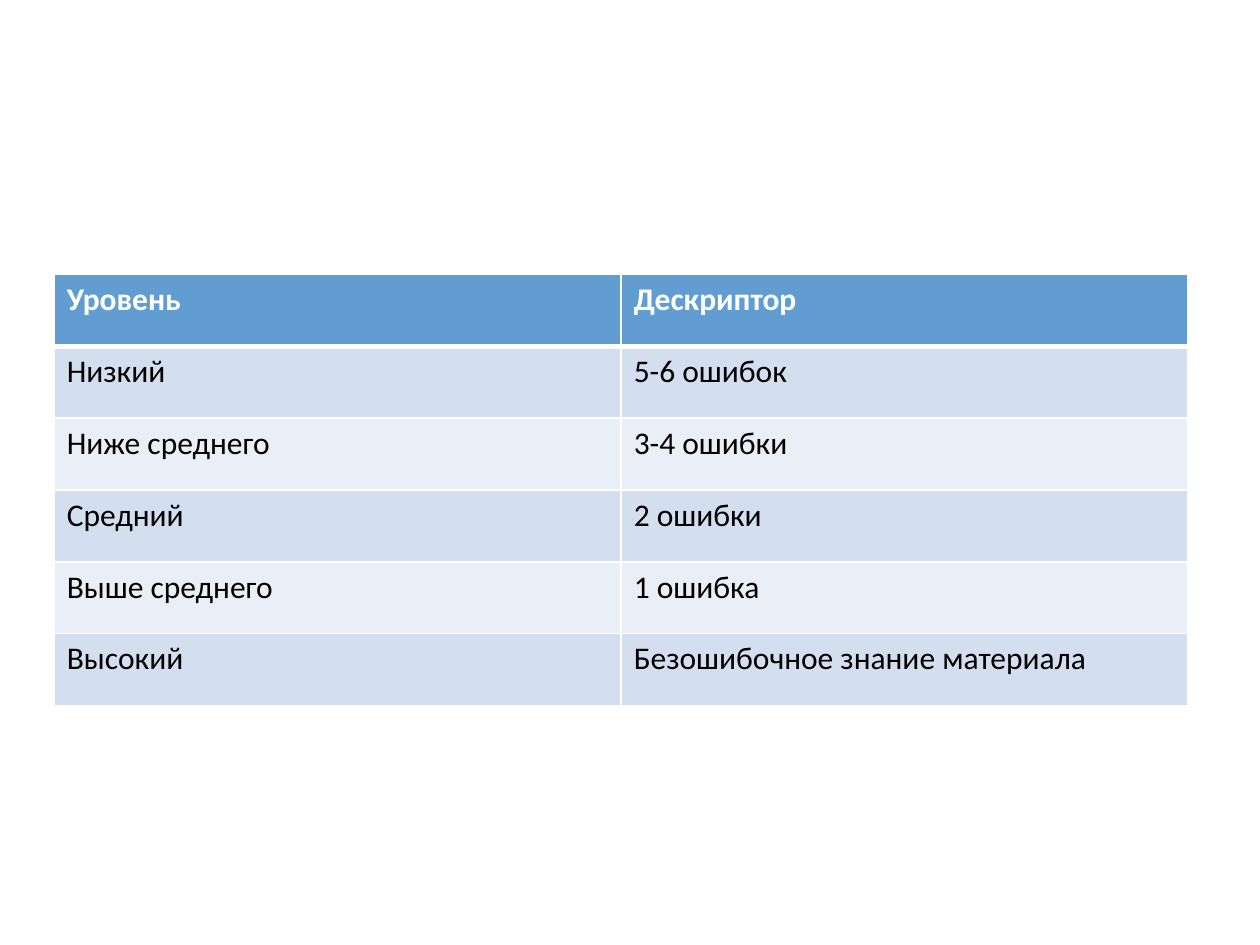
from lxml import etree
from pptx import Presentation
from pptx.dml.color import RGBColor
from pptx.oxml import ns
from pptx.util import Inches, Pt

FONT = "Calibri"
WHITE, BLACK = "FFFFFF", "000000"
HEADER_FILL = "629DD1"
BAND_FILLS = ("D3DFEE", "EAEFF7")

ROWS = [
    ("Уровень", "Дескриптор"),
    ("Низкий", "5-6 ошибок"),
    ("Ниже среднего", "3-4 ошибки"),
    ("Средний", "2 ошибки"),
    ("Выше среднего", "1 ошибка"),
    ("Высокий", "Безошибочное знание материала"),
]


def color(value):
    return RGBColor.from_string(value)


def set_borders(cell, widths):
    """Draw white cell borders; widths maps each side to points."""
    properties = cell._tc.get_or_add_tcPr()
    for side, width in widths.items():
        line = etree.SubElement(properties, ns.qn(f"a:ln{side}"), w=str(Pt(width)))
        fill = etree.SubElement(line, ns.qn("a:solidFill"))
        etree.SubElement(fill, ns.qn("a:srgbClr"), val=WHITE)


def format_cell(cell, content, row):
    is_header = row == 0
    # Borders come before the fill in the cell properties
    set_borders(cell, {"L": 1, "R": 1, "T": 3 if row == 1 else 1, "B": 3 if is_header else 1})
    cell.fill.solid()
    cell.fill.fore_color.rgb = color(HEADER_FILL if is_header else BAND_FILLS[(row - 1) % 2])

    cell.text = content
    font = cell.text_frame.paragraphs[0].font
    font.name = FONT
    font.size = Pt(18)
    font.bold = is_header
    font.color.rgb = color(WHITE if is_header else BLACK)


def add_level_table(slide):
    row_height = Inches(0.57)
    table = slide.shapes.add_table(
        len(ROWS), len(ROWS[0]), Inches(0.43), Inches(2.18),
        Inches(9), row_height * len(ROWS),
    ).table
    for row, contents in enumerate(ROWS):
        table.rows[row].height = row_height
        for column, content in enumerate(contents):
            format_cell(table.cell(row, column), content, row)


def main():
    presentation = Presentation()
    presentation.slide_width = Inches(10)
    presentation.slide_height = Inches(7.5)
    # Blank layout: the slide has no title
    slide = presentation.slides.add_slide(presentation.slide_layouts[6])
    add_level_table(slide)
    presentation.save("out.pptx")


if __name__ == "__main__":
    main()
